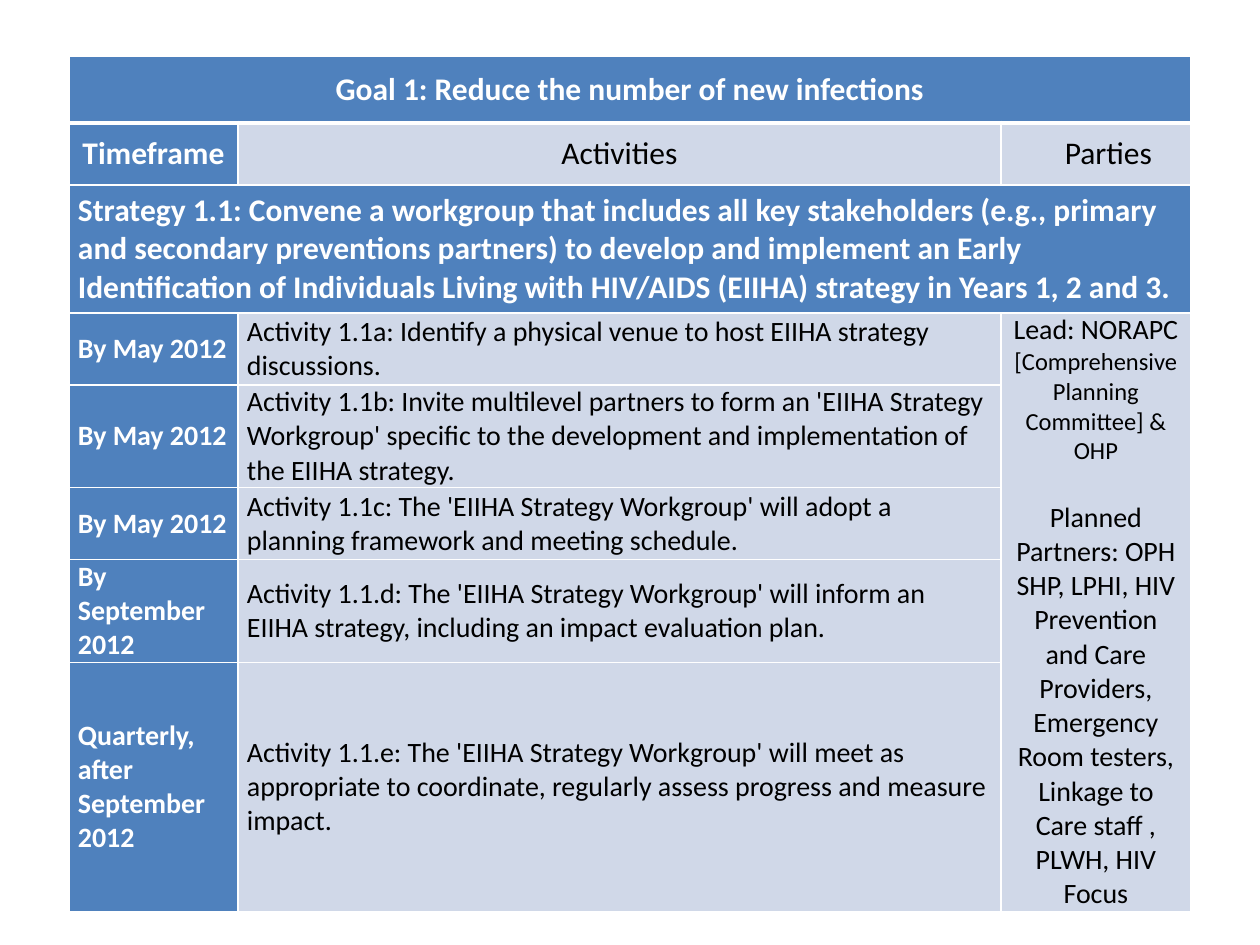
import pptx
import pptx.util
import pptx.dml.color
import pptx.enum.text
from lxml import etree

GOAL = "Goal 1: Reduce the number of new infections"
HEADINGS = ["Timeframe", "Activities", "Parties"]
STRATEGY = (
    "Strategy 1.1: Convene a workgroup that includes all key stakeholders "
    "(e.g., primary and secondary preventions partners) to develop and implement "
    "an Early Identification of Individuals Living with HIV/AIDS (EIIHA) strategy "
    "in Years 1, 2 and 3."
)
ACTIVITIES = [
    ("By May 2012",
     "Activity 1.1a: Identify a physical venue to host EIIHA strategy discussions."),
    ("By May 2012",
     "Activity 1.1b: Invite multilevel partners to form an 'EIIHA Strategy Workgroup' "
     "specific to the development and implementation of the EIIHA strategy."),
    ("By May 2012",
     "Activity 1.1c: The 'EIIHA Strategy Workgroup' will adopt a planning framework "
     "and meeting schedule."),
    ("By September 2012",
     "Activity 1.1.d: The 'EIIHA Strategy Workgroup' will inform an EIIHA strategy, "
     "including an impact evaluation plan."),
    ("Quarterly, after September 2012",
     "Activity 1.1.e: The 'EIIHA Strategy Workgroup' will meet as appropriate to "
     "coordinate, regularly assess progress and measure impact."),
]
LEAD = "Lead: NORAPC "
LEAD_DETAIL = "[Comprehensive Planning Committee] & OHP"
PARTNERS = (
    "Planned Partners: OPH SHP, LPHI, HIV Prevention and Care Providers, "
    "Emergency Room testers, Linkage to Care staff , PLWH, HIV Focus"
)

THEME = {
    "font": "Calibri", "blue": "4F81BD", "pale": "D0D8E8",
    "white": "FFFFFF", "black": "000000",
    "heading": 18, "body": 16, "small": 14, "gap": 19.5,
    "rule": 1, "thick_rule": 3,
}
PX = 914400 // 126
LEFT, TOP, INSET = 69, 56, 9
COLUMNS = [169, 763, 190]
ROWS = [67, 62, 128] + [72] * 4 + [246]
FIRST_ACTIVITY = 3
CENTER = pptx.enum.text.PP_ALIGN.CENTER
LEFT_ALIGN = pptx.enum.text.PP_ALIGN.LEFT


def px(n):
    return pptx.util.Emu(n * PX)


def rgb(name):
    return pptx.dml.color.RGBColor.from_string(THEME[name])


def style_run(r, size, strong):
    r.font.name = THEME["font"]
    r.font.size = pptx.util.Pt(THEME[size])
    r.font.bold = strong
    r.font.color.rgb = rgb("white" if strong else "black")


def fill_cell(cell, text, size, strong=False, align=LEFT_ALIGN):
    cell.text_frame.text = text
    for p in cell.text_frame.paragraphs:
        p.alignment = align
        for r in p.runs:
            style_run(r, size, strong)


def set_borders(cell, widths):
    """Put white lines, given in points by side, ahead of the cell's fill."""
    tc_pr = cell._tc.get_or_add_tcPr()
    ns = "{" + tc_pr.nsmap["a"] + "}"
    for i, (side, width) in enumerate(widths.items()):
        ln = etree.Element(ns + "ln" + side, w=str(pptx.util.Pt(width)))
        fill = etree.SubElement(ln, ns + "solidFill")
        etree.SubElement(fill, ns + "srgbClr", val=THEME["white"])
        tc_pr.insert(i, ln)


def format_cells(table):
    for i in range(len(ROWS)):
        for j in range(len(COLUMNS)):
            cell = table.cell(i, j)
            cell.margin_left = cell.margin_right = px(INSET)
            cell.margin_top = cell.margin_bottom = 0
            cell.vertical_anchor = pptx.enum.text.MSO_ANCHOR.MIDDLE
            cell.fill.solid()
            cell.fill.fore_color.rgb = rgb("blue" if i in (0, 2) or j == 0 else "pale")
            widths = dict.fromkeys("LRTB", THEME["rule"])
            if i < 2:
                widths["B" if i == 0 else "T"] = THEME["thick_rule"]
            set_borders(cell, widths)


def main():
    prs = pptx.Presentation()
    prs.slide_width, prs.slide_height = px(1260), px(945)
    s = prs.slides.add_slide(prs.slide_layouts[6])
    table = s.shapes.add_table(len(ROWS), len(COLUMNS), px(LEFT), px(TOP),
                               px(sum(COLUMNS)), px(sum(ROWS))).table
    for column, width in zip(table.columns, COLUMNS):
        column.width = px(width)
    for row, height in zip(table.rows, ROWS):
        row.height = px(height)
    format_cells(table)
    for i in (0, 2):
        table.cell(i, 0).merge(table.cell(i, 2))
    parties = table.cell(FIRST_ACTIVITY, 2)
    parties.merge(table.cell(len(ROWS) - 1, 2))

    fill_cell(table.cell(0, 0), GOAL, "heading", True, CENTER)
    for j, heading in enumerate(HEADINGS):
        fill_cell(table.cell(1, j), heading, "heading", j == 0, CENTER)
    heading_p = table.cell(1, 2).text_frame.paragraphs[0]
    heading_p._p.get_or_add_pPr().set("marL", str(px(25)))
    fill_cell(table.cell(2, 0), STRATEGY, "heading", True)

    for i, (when, activity) in enumerate(ACTIVITIES, FIRST_ACTIVITY):
        fill_cell(table.cell(i, 0), when, "body", True)
        fill_cell(table.cell(i, 1), activity, "body")

    fill_cell(parties, LEAD + "\n" + PARTNERS, "body", align=CENTER)
    lead, partners = parties.text_frame.paragraphs
    r = lead.add_run()
    r.text = LEAD_DETAIL
    style_run(r, "small", False)
    partners.space_before = pptx.util.Pt(THEME["gap"])

    prs.save("out.pptx")


if __name__ == "__main__":
    main()
